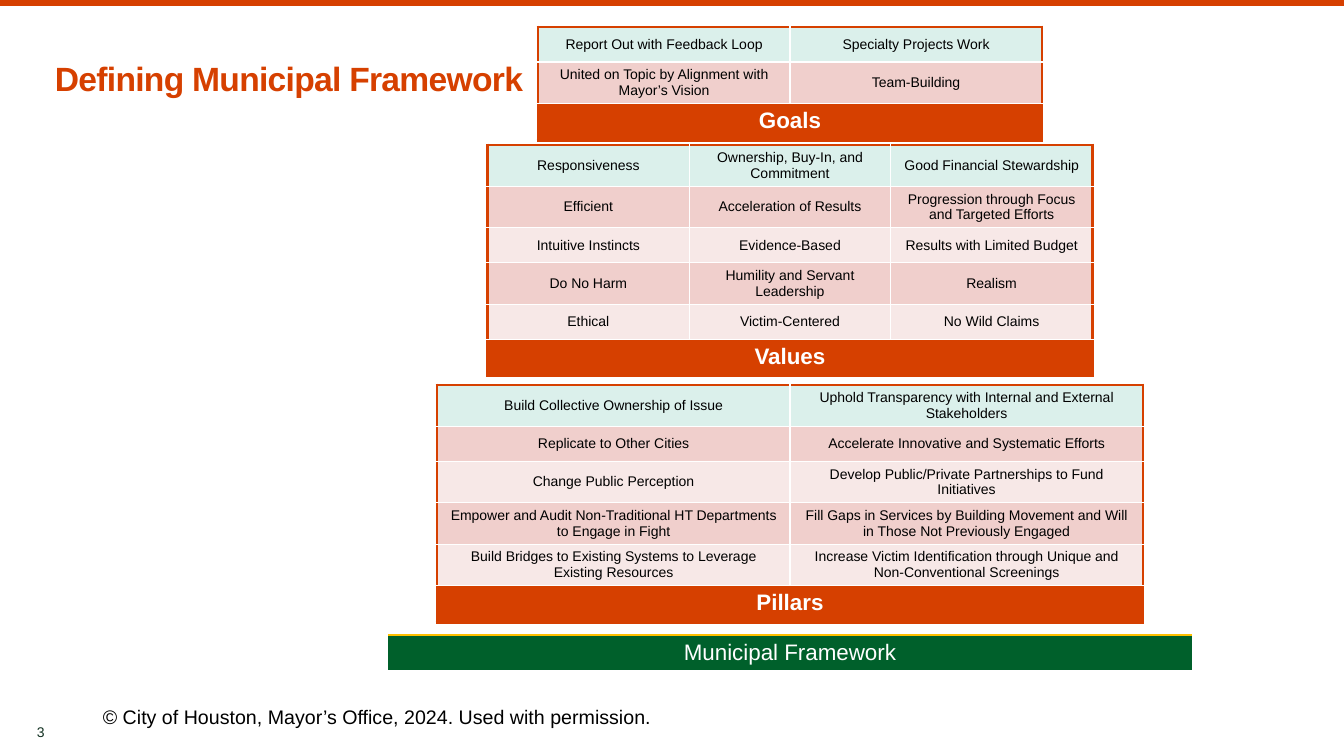
from lxml.etree import SubElement
from pptx import Presentation
from pptx.dml.color import RGBColor
from pptx.enum.shapes import MSO_CONNECTOR as Connector
from pptx.enum.text import MSO_ANCHOR as Anchor, PP_ALIGN as Align
from pptx.oxml.ns import qn
from pptx.util import Emu, Pt

COLORS = {
    "accent": "D64000", "white": "FFFFFF", "black": "000000", "mint": "DBF0EB",
    "rose": "F0CFCC", "blush": "F7E8E7", "green": "00602B", "gold": "FFC000",
    "ink": "123121",
}

# Each tier of the pyramid: top, width, rows of entries, band below them
TIERS = [
    (145, 605, [
        ("Responsiveness", "Ownership, Buy-In, and Commitment", "Good Financial Stewardship"),
        ("Efficient", "Acceleration of Results", "Progression through Focus and Targeted Efforts"),
        ("Intuitive Instincts", "Evidence-Based", "Results with Limited Budget"),
        ("Do No Harm", "Humility and Servant Leadership", "Realism"),
        ("Ethical", "Victim-Centered", "No Wild Claims"),
    ], "Values"),
    (385, 706, [
        ("Build Collective Ownership of Issue",
         "Uphold Transparency with Internal and External Stakeholders"),
        ("Replicate to Other Cities", "Accelerate Innovative and Systematic Efforts"),
        ("Change Public Perception", "Develop Public/Private Partnerships to Fund Initiatives"),
        ("Empower and Audit Non-Traditional HT Departments to Engage in Fight",
         "Fill Gaps in Services by Building Movement and Will in Those Not Previously Engaged"),
        ("Build Bridges to Existing Systems to Leverage Existing Resources",
         "Increase Victim Identification through Unique and Non-Conventional Screenings"),
    ], "Pillars"),
    (635, 806, [], "Municipal Framework"),
    (27, 504, [
        ("Report Out with Feedback Loop", "Specialty Projects Work"),
        ("United on Topic by Alignment with Mayor’s Vision", "Team-Building"),
    ], "Goals"),
]

# Text, box (left, top, width, height), anchor, line spacing, font, colour, tracking
TEXTS = [
    ("3", (27, 723, 30, 18), Anchor.MIDDLE, None, {"size": Pt(10)}, "ink", 0),
    ("Defining Municipal Framework", (45, 58, 1229, 46), Anchor.MIDDLE, 0.9,
     {"size": Pt(24), "bold": True}, "accent", -50),
    ("© City of Houston, Mayor’s Office, 2024. Used with permission.",
     (93, 700, 684, 34), Anchor.TOP, None, {"size": Pt(14)}, "black", 0),
]

SLIDE_WIDTH, SLIDE_HEIGHT = 1344, 756
PYRAMID_CENTER = 790
ROW_HEIGHT = 35
BAND_HEIGHT = 37
ENTRY_FONT = {"size": Pt(10), "bold": False}
BAND_FONT = {"size": Pt(16), "bold": True}
BASE_FONT = {"size": Pt(16), "bold": False}
THIN = ("white", 1)
EDGE = ("accent", 2.25)


def px(value):
    return Emu(round(value * 914400 / 100.8))


def rgb(name):
    return RGBColor.from_string(COLORS[name])


def write(para, text, font, color, tracking=0):
    span = para.add_run()
    span.text = text
    for key, value in {"name": "Arial", **font}.items():
        setattr(span.font, key, value)
    span.font.color.rgb = rgb(color)
    if tracking:
        span.font._element.set("spc", str(tracking))


def style_cell(cell, fill, borders):
    """Fill a cell and draw its borders, given in the order left, right, top, bottom."""
    props = cell._tc.get_or_add_tcPr()
    for side, (color, points) in zip("LRTB", borders):
        line = SubElement(props, qn(f"a:ln{side}"), w=str(Pt(points)))
        SubElement(SubElement(line, qn("a:solidFill")), qn("a:srgbClr"), val=COLORS[color])
    cell.fill.solid()
    cell.fill.fore_color.rgb = rgb(fill)


def fill_cell(cell, text, font, color):
    para = cell.text_frame.paragraphs[0]
    para.alignment = Align.CENTER
    write(para, text, font, color)


def add_tier(page, top, width, entries, band):
    columns = len(entries[0]) if entries else 1
    last = len(entries)
    table = page.shapes.add_table(
        last + 1, columns, px(PYRAMID_CENTER - width / 2), px(top), px(width),
        px(last * ROW_HEIGHT + BAND_HEIGHT)).table
    table.first_row = table.horz_banding = False
    for column in table.columns:
        column.width = px(width / columns)
    for number, row in enumerate(table.rows):
        row.height = px(ROW_HEIGHT if number < last else BAND_HEIGHT)

    for r, texts in enumerate(entries):
        fill = "mint" if r == 0 else ("blush", "rose")[r % 2]
        for c, text in enumerate(texts):
            cell = table.cell(r, c)
            style_cell(cell, fill, (EDGE if c == 0 else THIN,
                                    EDGE if c == columns - 1 else THIN,
                                    EDGE if r == 0 else THIN, THIN))
            cell.vertical_anchor = Anchor.MIDDLE
            fill_cell(cell, text, ENTRY_FONT, "black")

    for c in range(columns):
        if entries:
            style_cell(table.cell(last, c), "accent", (EDGE, EDGE, THIN, EDGE))
        else:
            style_cell(table.cell(last, c), "green", (THIN, THIN, ("gold", 2.25), ("white", 3)))
    if columns > 1:
        table.cell(last, 0).merge(table.cell(last, columns - 1))
    fill_cell(table.cell(last, 0), band, BAND_FONT if entries else BASE_FONT, "white")


def add_text(page, text, box, anchor, spacing, font, color, tracking):
    frame = page.shapes.add_textbox(*map(px, box)).text_frame
    frame.word_wrap = True
    frame.vertical_anchor = anchor
    para = frame.paragraphs[0]
    para.line_spacing = spacing
    write(para, text, font, color, tracking)


def main():
    deck = Presentation()
    deck.slide_width, deck.slide_height = px(SLIDE_WIDTH), px(SLIDE_HEIGHT)
    page = deck.slides.add_slide(deck.slide_layouts[6])

    rule = page.shapes.add_connector(Connector.STRAIGHT, 0, px(3), px(SLIDE_WIDTH), px(3))
    rule.line.color.rgb = rgb("accent")
    rule.line.width = Pt(5)
    SubElement(rule._element.spPr, qn("a:effectLst"))

    for tier in TIERS:
        add_tier(page, *tier)
    for text in TEXTS:
        add_text(page, *text)
    deck.save("out.pptx")


if __name__ == "__main__":
    main()
